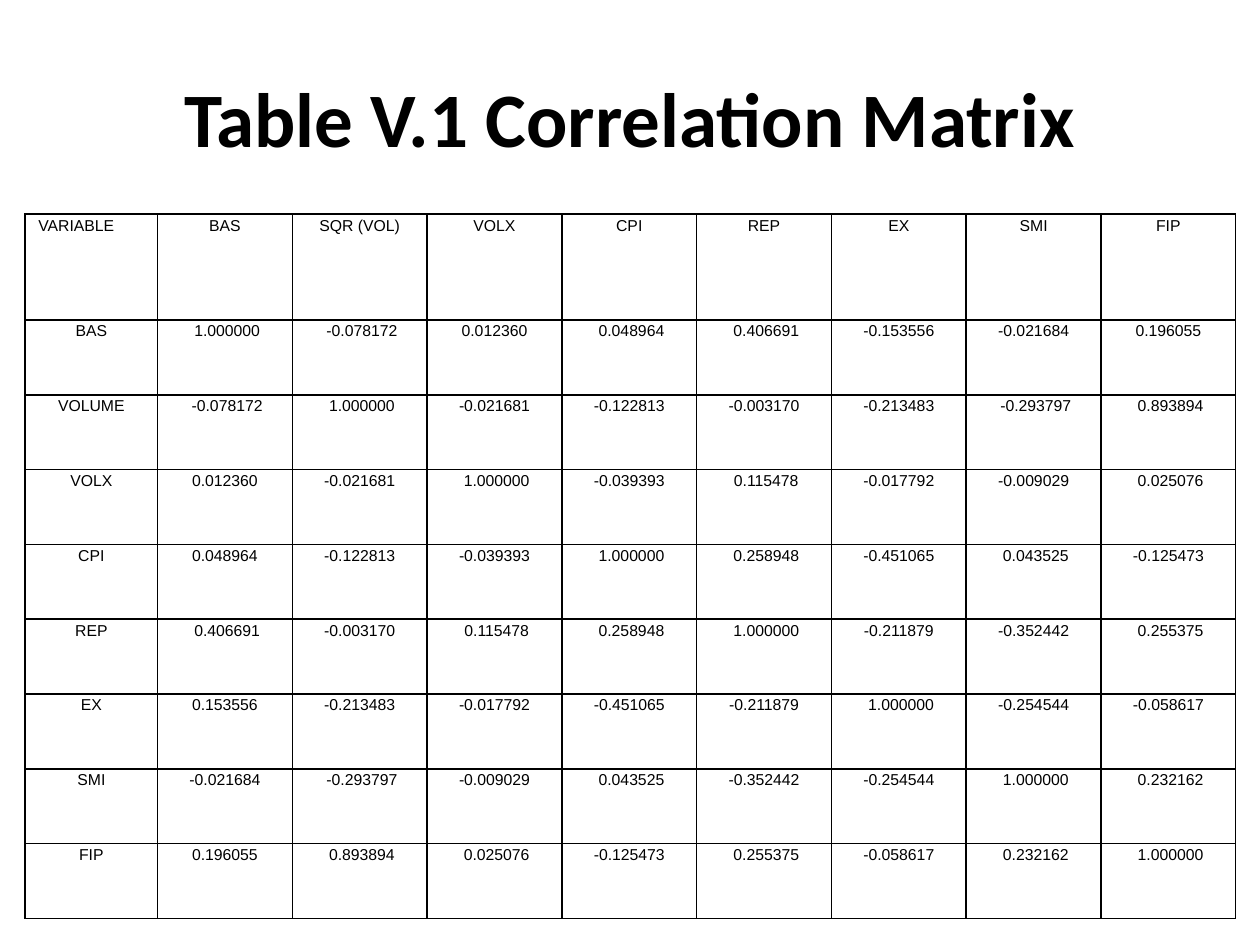
from dataclasses import dataclass

from lxml.etree import SubElement as Sub
from pptx import Presentation as Deck
from pptx.dml.color import RGBColor as Color
from pptx.enum.text import MSO_ANCHOR as Anchor, PP_ALIGN as Align
from pptx.oxml.ns import qn
from pptx.util import Inches, Pt


@dataclass(frozen=True)
class Theme:
    ink: str = "000000"
    head: tuple = ("Calibri", 44, True)
    body: tuple = ("Arial", 9, False)
    rule: float = 1


THEME = Theme()
HARD = chr(160)
HEADS = ["~VARIABLE", "BAS", "SQR (VOL)", "VOLX", "CPI", "REP", "EX", "SMI", "FIP"]
ROWS = """
BAS ~1.000000 ~-0.078172 0.012360 ~0.048964 ~0.406691 -0.153556 -0.021684 0.196055
VOLUME ~-0.078172 ~1.000000 -0.021681 -0.122813 -0.003170 -0.213483 ~-0.293797 ~0.893894
VOLX 0.012360 -0.021681 ~1.000000 -0.039393 ~0.115478 -0.017792 -0.009029 ~0.025076
CPI 0.048964 -0.122813 -0.039393 ~1.000000 ~0.258948 -0.451065 ~0.043525 -0.125473
REP ~0.406691 -0.003170 ~0.115478 ~0.258948 ~1.000000 -0.211879 -0.352442 ~0.255375
EX 0.153556 -0.213483 -0.017792 -0.451065 -0.211879 ~1.000000 -0.254544 -0.058617
SMI -0.021684 ~-0.293797 -0.009029 ~0.043525 -0.352442 -0.254544 ~1.000000 ~0.232162
FIP 0.196055 ~0.893894 ~0.025076 -0.125473 ~0.255375 -0.058617 ~0.232162 ~1.000000
"""


def style(item, values):
    for name, value in values.items():
        setattr(item, name, value)


def write(frame, text, look, para):
    line = frame.paragraphs[0]
    style(line, para)
    run = line.add_run()
    run.text = text
    face, size, bold = look
    style(run.font, {"name": face, "size": Pt(size), "bold": bold})
    run.font.color.rgb = Color.from_string(THEME.ink)


def add_rules(cell):
    props = cell._tc.get_or_add_tcPr()
    for side in ("lnL", "lnR", "lnT", "lnB"):
        line = Sub(props, qn(f"a:{side}"), w=str(Pt(THEME.rule)))
        fill = Sub(line, qn("a:solidFill"))
        Sub(fill, qn("a:srgbClr"), val=THEME.ink)


def add_title(slide, text):
    title = slide.shapes.title
    style(title, {"left": Inches(0.5), "top": Inches(0.3),
                  "width": Inches(9), "height": Inches(1.25)})
    title.text_frame.vertical_anchor = Anchor.MIDDLE
    write(title.text_frame, text, THEME.head, {"alignment": Align.CENTER})


def fill_cell(cell, text, align):
    style(cell, {"margin_left": Inches(0.07), "margin_right": Inches(0.07),
                 "margin_top": 0, "margin_bottom": 0,
                 "vertical_anchor": Anchor.TOP})
    write(cell.text_frame, text.replace("~", HARD), THEME.body,
          {"alignment": align, "line_spacing": 1.15})
    add_rules(cell)
    cell.fill.background()


def share(total, first, count):
    rest = (total - first) / (count - 1)
    return [Inches(first)] + [Inches(rest)] * (count - 1)


def add_matrix(slide, data):
    wide, high = 9.61, 5.59
    table = slide.shapes.add_table(len(data), len(data[0]), Inches(0.2), Inches(1.7),
                                   Inches(wide), Inches(high)).table
    style(table, {"first_row": False, "horz_banding": False})
    for col, width in zip(table.columns, share(wide, 1.05, len(data[0]))):
        col.width = width
    for row, height in zip(table.rows, share(high, 0.84, len(data))):
        row.height = height
    for r, texts in enumerate(data):
        for c, text in enumerate(texts):
            align = Align.CENTER if r or c else Align.LEFT
            fill_cell(table.cell(r, c), text, align)


def main():
    deck = Deck()
    style(deck, {"slide_width": Inches(10), "slide_height": Inches(7.5)})
    slide = deck.slides.add_slide(deck.slide_layouts[5])
    add_title(slide, "Table V.1 Correlation Matrix")
    add_matrix(slide, [HEADS] + [row.split() for row in ROWS.strip().splitlines()])
    deck.save("out.pptx")


if __name__ == "__main__":
    main()
